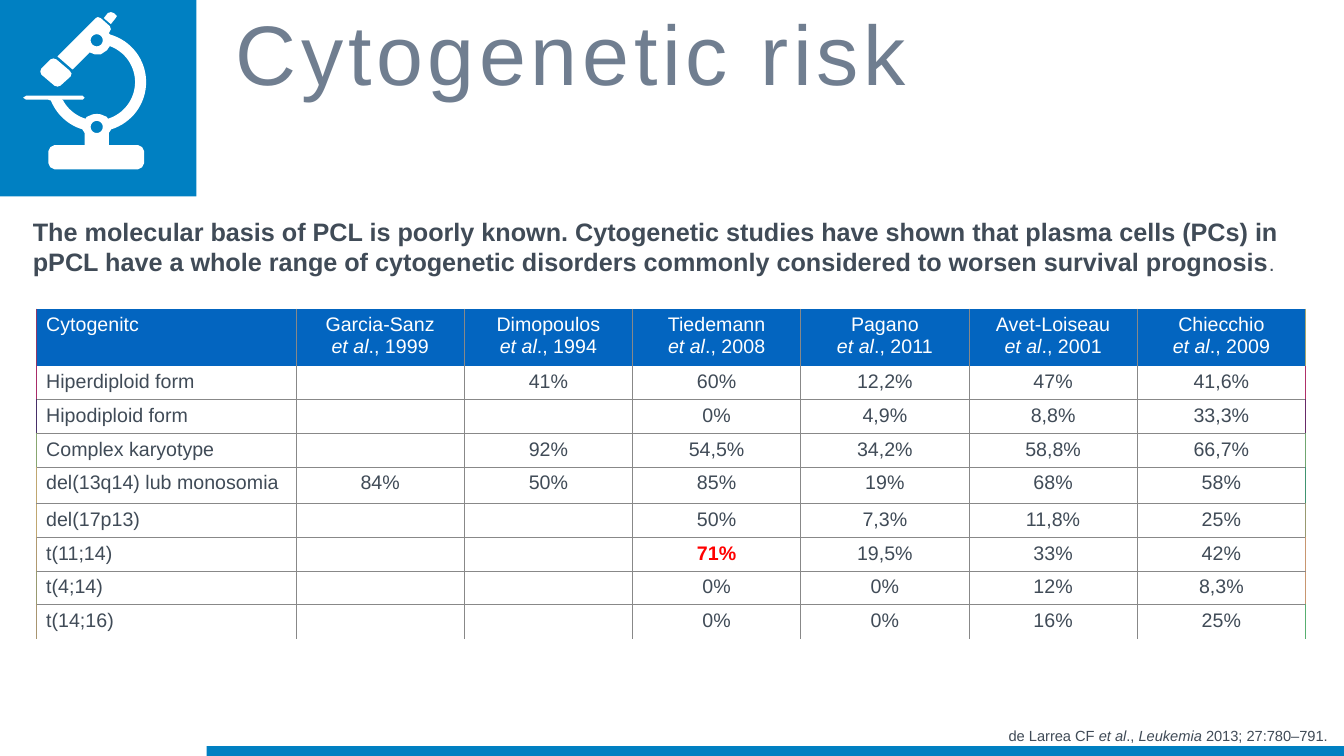
from math import cos, radians, sin
from lxml.etree import SubElement
from pptx import Presentation
from pptx.dml.color import RGBColor
from pptx.enum.shapes import MSO_SHAPE
from pptx.enum.text import MSO_ANCHOR, PP_ALIGN
from pptx.oxml.ns import qn
from pptx.util import Cm, Pt

COLORS = {"brand": "0080C2", "title": "707E90", "head": "0365C0", "text": "404B57",
          "white": "FFFFFF", "alert": "FF0000", "grid": "888888"}
TITLE = "Cytogenetic risk"
INTRO = [("The molecular basis of PCL is poorly known. Cytogenetic studies have shown that "
          "plasma cells (PCs) in pPCL have a whole range of cytogenetic disorders commonly "
          "considered to worsen survival prognosis", {"size": Pt(18), "bold": True}),
         (".", {"size": Pt(15)})]
SOURCE = [("de Larrea CF ", {}), ("et al", {"italic": True}), ("., ", {}),
          ("Leukemia", {"italic": True}), (" 2013; 27:780–791.", {})]
CORNER = "Cytogenitc"
STUDIES = [("Garcia-Sanz", 1999), ("Dimopoulos", 1994), ("Tiedemann", 2008),
           ("Pagano", 2011), ("Avet-Loiseau", 2001), ("Chiecchio", 2009)]
ROWS = [
    ("Hiperdiploid form", "", "41%", "60%", "12,2%", "47%", "41,6%"),
    ("Hipodiploid form", "", "", "0%", "4,9%", "8,8%", "33,3%"),
    ("Complex karyotype", "", "92%", "54,5%", "34,2%", "58,8%", "66,7%"),
    ("del(13q14) lub monosomia", "84%", "50%", "85%", "19%", "68%", "58%"),
    ("del(17p13)", "", "", "50%", "7,3%", "11,8%", "25%"),
    ("t(11;14)", "", "", "71%", "19,5%", "33%", "42%"),
    ("t(4;14)", "", "", "0%", "0%", "12%", "8,3%"),
    ("t(14;16)", "", "", "0%", "0%", "16%", "25%"),
]
ALERT_VALUE = "71%"
LEFT_EDGE = ["903868", "A82C68", "482F68", "88A670", "C0A770", "C0A770", "B09970", "989970", "A89570"]
RIGHT_EDGE = ["A8A770", "B03068", "682A68", "70A670", "409470", "989970", "C89670", "C89670", "58AF70"]
COL_W = [6.55] + [4.24] * 6
ROW_H = [1.44, 0.85, 0.85, 0.85, 0.92, 0.85, 0.85, 0.85, 0.85]


def arc(cx, cy, rad, start, end, steps=32):
    """Return points along a circular arc, angles in degrees."""
    turns = [radians(start + (end - start) * i / steps) for i in range(steps + 1)]
    return [(cx + rad * cos(t), cy + rad * sin(t)) for t in turns]


EYEPIECE = [(103, 18), (107, 13), (110, 12), (113, 13), (116, 16), (114, 19), (110, 24)]
OBJECTIVE = [(53, 58), (50, 59), (41, 68), (40, 71), (41, 74), (54, 85), (57, 86),
             (60, 85), (70, 76), (71, 73), (69, 70), (56, 59)]
TUBE = [(97, 17), (95, 18), (57, 56), (72, 69), (89, 52), (94, 54), (100, 54), (106, 50)]
JOINT = [(106, 116), (100, 113.5), (96, 113), (92, 113.5), (86, 116)]
STAGE = [(59, 99), (82, 99), (84, 97), (82, 95), (26, 95), (23, 97), (26, 99), (48, 99)]
BASE = [(84, 132), (84, 144), (54, 144), (50, 146), (48, 150), (48, 162), (50, 166),
        (54, 168), (137, 168), (141, 166), (143, 162), (143, 150), (141, 146),
        (137, 144), (108, 144), (108, 132)]
TOP_JOINT = [(108, 33), (110, 29), (109, 26), (100, 18)]
FRAME = (TUBE + arc(96, 81.5, 38, -70, 73) + JOINT + arc(96, 81.5, 38, 107, 152) + STAGE
         + arc(96, 81.5, 49, 158, 107) + BASE + arc(96, 81.5, 49, 73, -74) + TOP_JOINT)
MICROSCOPE = [EYEPIECE, FRAME, arc(96, 40, 6, 0, 360), OBJECTIVE, arc(96, 126, 6, 0, 360)]


def rgb(name):
    return RGBColor.from_string(COLORS[name])


def paint(sp, name):
    sp.shadow.inherit = False
    sp.fill.solid()
    sp.fill.fore_color.rgb = rgb(name)
    sp.line.fill.background()


def add_runs(p, runs, size, color):
    for text, extra in runs:
        r = p.add_run()
        r.text = text
        for key, value in {"name": "Arial", "size": size, **extra}.items():
            setattr(r.font, key, value)
        r.font.color.rgb = rgb(color)


def add_text(s, box, runs, size, color, **frame):
    tf = s.shapes.add_textbox(*map(Cm, box)).text_frame
    for key, value in frame.items():
        setattr(tf, key, value)
    add_runs(tf.paragraphs[0], runs, size, color)
    return tf


def add_border(cell, side, color):
    ln = SubElement(cell._tc.get_or_add_tcPr(), qn(f"a:ln{side}"), w=str(Pt(0.6)))
    if color:
        SubElement(SubElement(ln, qn("a:solidFill")), qn("a:srgbClr"), val=color)
    else:
        SubElement(ln, qn("a:noFill"))


def add_microscope(s):
    unit = Cm(2.54) / 100
    outlines = [[(x * unit, y * unit) for x, y in part] for part in MICROSCOPE]
    fb = s.shapes.build_freeform(*outlines[0][0])
    for i, points in enumerate(outlines):
        if i:
            fb.move_to(*points[0])
        fb.add_line_segments(points[1:], close=True)
    paint(fb.convert_to_shape(), "white")


def fill_cell(cell, i, j, value):
    last_row, last_col = len(ROWS), len(STUDIES)
    grid = COLORS["grid"]
    add_border(cell, "L", grid if j else LEFT_EDGE[i])
    add_border(cell, "R", grid if j < last_col else RIGHT_EDGE[i])
    add_border(cell, "T", grid if i > 1 else None)
    add_border(cell, "B", grid if 0 < i < last_row else None)
    cell.fill.solid()
    cell.fill.fore_color.rgb = rgb("white" if i else "head")
    p = cell.text_frame.paragraphs[0]
    p.alignment = PP_ALIGN.CENTER if j else PP_ALIGN.LEFT
    color = "text" if i else "white"
    if isinstance(value, tuple):
        author, year = value
        add_runs(p, [(author, {})], Pt(14), color)
        p.add_line_break()
        add_runs(p, [("et al", {"italic": True}), (f"., {year}", {})], Pt(14), color)
    elif value == ALERT_VALUE:
        add_runs(p, [(value, {"bold": True})], Pt(14), "alert")
    elif value:
        add_runs(p, [(value, {})], Pt(14), color)
    else:
        p._p.get_or_add_endParaRPr().set("sz", "1400")


def add_risk_table(s):
    cells = [(CORNER, *STUDIES)] + ROWS
    box = (0.91, 7.78, sum(COL_W), sum(ROW_H))
    table = s.shapes.add_table(len(cells), len(COL_W), *map(Cm, box)).table
    table.first_row = table.horz_banding = False
    for col, width in zip(table.columns, COL_W):
        col.width = Cm(width)
    for i, values in enumerate(cells):
        table.rows[i].height = Cm(ROW_H[i])
        for j, value in enumerate(values):
            fill_cell(table.cell(i, j), i, j, value)


def main():
    prs = Presentation()
    prs.slide_width, prs.slide_height = Cm(33.87), Cm(19.05)
    s = prs.slides.add_slide(prs.slide_layouts[6])
    for box in [(0, 0, 4.95, 4.95), (5.21, 18.8, 28.66, 0.25)]:
        paint(s.shapes.add_shape(MSO_SHAPE.RECTANGLE, *map(Cm, box)), "brand")
    tf = add_text(s, (5.94, 0.86, 26.19, 3.96), [(TITLE, {})], Pt(60.3), "title",
                  word_wrap=True, vertical_anchor=MSO_ANCHOR.BOTTOM, margin_left=0,
                  margin_right=0, margin_top=0, margin_bottom=Cm(2.49))
    p = tf.paragraphs[0]
    p.line_spacing = 0.8
    p.runs[0].font._element.set("spc", "340")
    add_microscope(s)
    add_risk_table(s)
    add_text(s, (25.17, 18.19, 8.71, 0.71), SOURCE, Pt(10.5), "text", word_wrap=False)
    add_text(s, (0.58, 5.33, 32.13, 1.8), INTRO, Pt(18), "text", word_wrap=True)
    prs.save("out.pptx")


if __name__ == "__main__":
    main()
